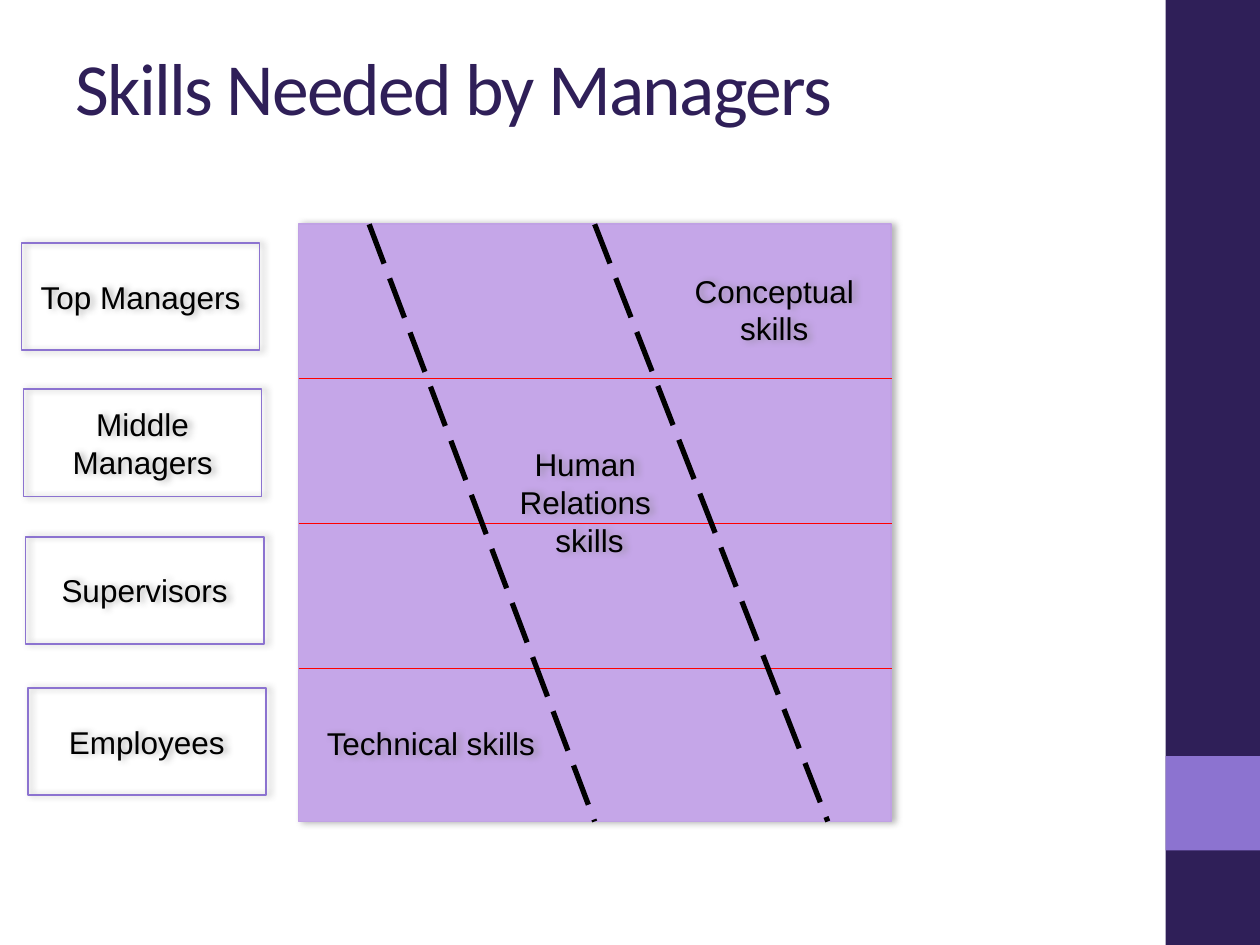
import pptx
import pptx.util
import pptx.oxml
import pptx.oxml.ns
import pptx.dml.color
import pptx.enum.dml
import pptx.enum.shapes
import pptx.enum.text

Inch, Pt = pptx.util.Inches, pptx.util.Pt
Dash = pptx.enum.dml.MSO_LINE
Kind = pptx.enum.shapes.MSO_SHAPE
Link = pptx.enum.shapes.MSO_CONNECTOR
Align = pptx.enum.text.PP_ALIGN
Anchor = pptx.enum.text.MSO_ANCHOR

INK = {"dark": "2F1F58", "mid": "8C73D0", "pale": "C5A6E8", "rim": "C0A1E4",
       "rule": "FF0000", "text": "000000", "shade": "808080"}

TITLE = "Skills Needed by Managers"
LEVELS = [("Top Managers", 1.93), ("Middle Managers", 3.09),
          ("Supervisors", 4.26), ("Employees", 5.46)]
SKILLS = [(["Technical skills"], (2.3, 5.67, 2.24, 0.46)),
          (["Human ", "Relations ", "skills"], (3.56, 3.56, 2.24, 0.85)),
          (["Conceptual skills"], (5.22, 2.13, 1.85, 0.65))]

WIDE, HIGH = 10, 7.5
BAR = WIDE * 0.075
LEFT, TOP, SPAN, TALL = 2.37, 1.78, 4.7, 4.74
RIGHT, BASE = LEFT + SPAN, TOP + TALL
RULES = [3 + 1.15 * row for row in range(3)]
SLANTS = [(4.72, 6.57), (2.93, 4.72)]


def color(name):
    return pptx.dml.color.RGBColor.from_string(INK[name])


def effects(shape, inner=""):
    """Give the shape its own effect list, empty unless inner is set."""
    shape._element.spPr.append(pptx.oxml.parse_xml(
        f'<a:effectLst {pptx.oxml.ns.nsdecls("a")}>{inner}</a:effectLst>'))


def shade(shape):
    effects(shape, f'<a:outerShdw blurRad="{Pt(4)}" dist="{Pt(2)}" dir="0">'
                   f'<a:srgbClr val="{INK["shade"]}"><a:alpha val="60000"/>'
                   '</a:srgbClr></a:outerShdw>')


def block(slide, spot, fill=None, edge=None, cast=False):
    shape = slide.shapes.add_shape(Kind.RECTANGLE, *map(Inch, spot))
    if fill:
        shape.fill.solid()
        shape.fill.fore_color.rgb = color(fill)
    else:
        shape.fill.background()
    if edge:
        shape.line.color.rgb = color(edge)
        shape.line.width = Pt(1)
    else:
        shape.line.fill.background()
    if cast:
        shade(shape)
    else:
        shape.shadow.inherit = False
    return shape


def line(slide, start, end, ink, width, dash):
    link = slide.shapes.add_connector(Link.STRAIGHT, *map(Inch, start + end))
    link.line.color.rgb = color(ink)
    link.line.width = Pt(width)
    link.line.dash_style = dash
    effects(link)


def style(run, size, face, ink):
    run.font.size = Pt(size)
    run.font.name = face
    run.font.color.rgb = color(ink)


def write(shape, lines):
    frame = shape.text_frame
    frame.word_wrap = True
    frame.vertical_anchor = Anchor.MIDDLE
    for num, words in enumerate(lines):
        para = frame.add_paragraph() if num else frame.paragraphs[0]
        para.alignment = Align.CENTER
        run = para.add_run()
        run.text = words
        style(run, 18, "Arial", "text")


def head(slide):
    title = slide.shapes.title
    title.left, title.top, title.width, title.height = map(
        Inch, (0.5, 0.06, 9.28, 1.25))
    title.text_frame.vertical_anchor = Anchor.MIDDLE
    para = title.text_frame.paragraphs[0]
    para.alignment = Align.LEFT
    run = para.add_run()
    run.text = TITLE
    style(run, 42, "Calibri", "dark")
    run.font._element.set("spc", "-100")


def main():
    deck = pptx.Presentation()
    deck.slide_width, deck.slide_height = Inch(WIDE), Inch(HIGH)
    slide = deck.slides.add_slide(deck.slide_layouts[5])
    head(slide)
    block(slide, (WIDE - BAR, 0, BAR, HIGH), "dark")
    block(slide, (WIDE - BAR, HIGH * 0.8, BAR, BAR), "mid")

    block(slide, (LEFT, TOP, SPAN, TALL), "pale", "rim", True)
    for y in RULES:
        line(slide, (LEFT, y), (RIGHT, y), "rule", 0.25, Dash.ROUND_DOT)
    for above, below in SLANTS:
        line(slide, (above, TOP), (below, BASE), "text", 3, Dash.LONG_DASH)

    for row, (name, top) in enumerate(LEVELS):
        spot = (0.17 + row / 60, top, 1.89, 0.85)
        write(block(slide, spot, edge="mid", cast=True), [name])
    for lines, spot in SKILLS:
        box = slide.shapes.add_textbox(*map(Inch, spot))
        write(box, lines)
        shade(box)

    deck.save("out.pptx")


if __name__ == "__main__":
    main()
